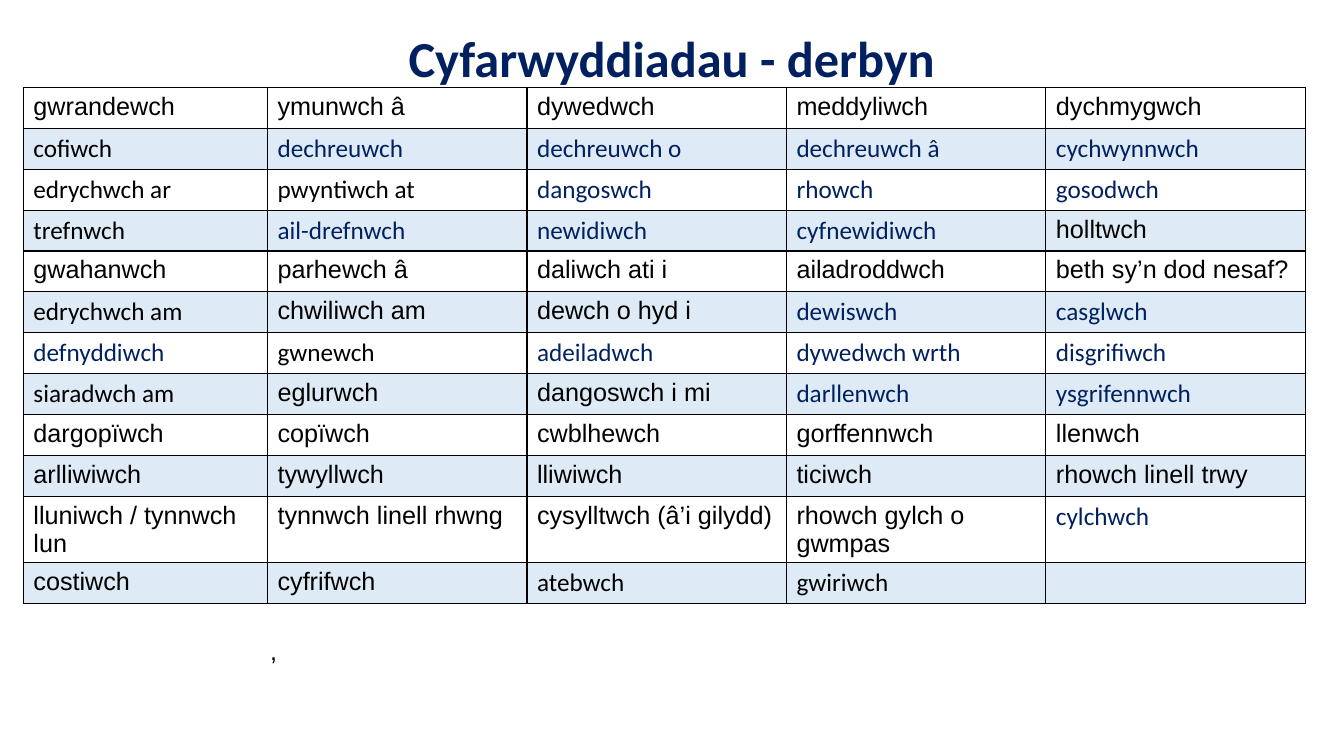
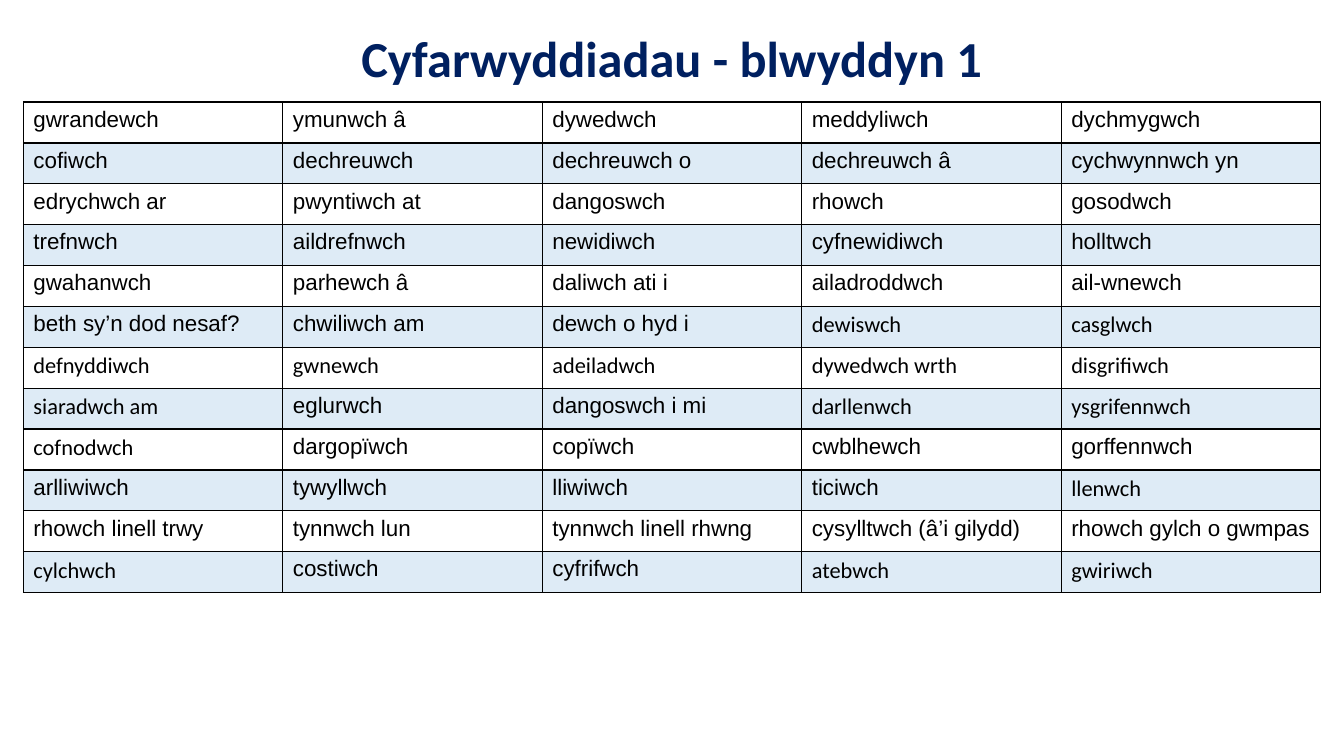
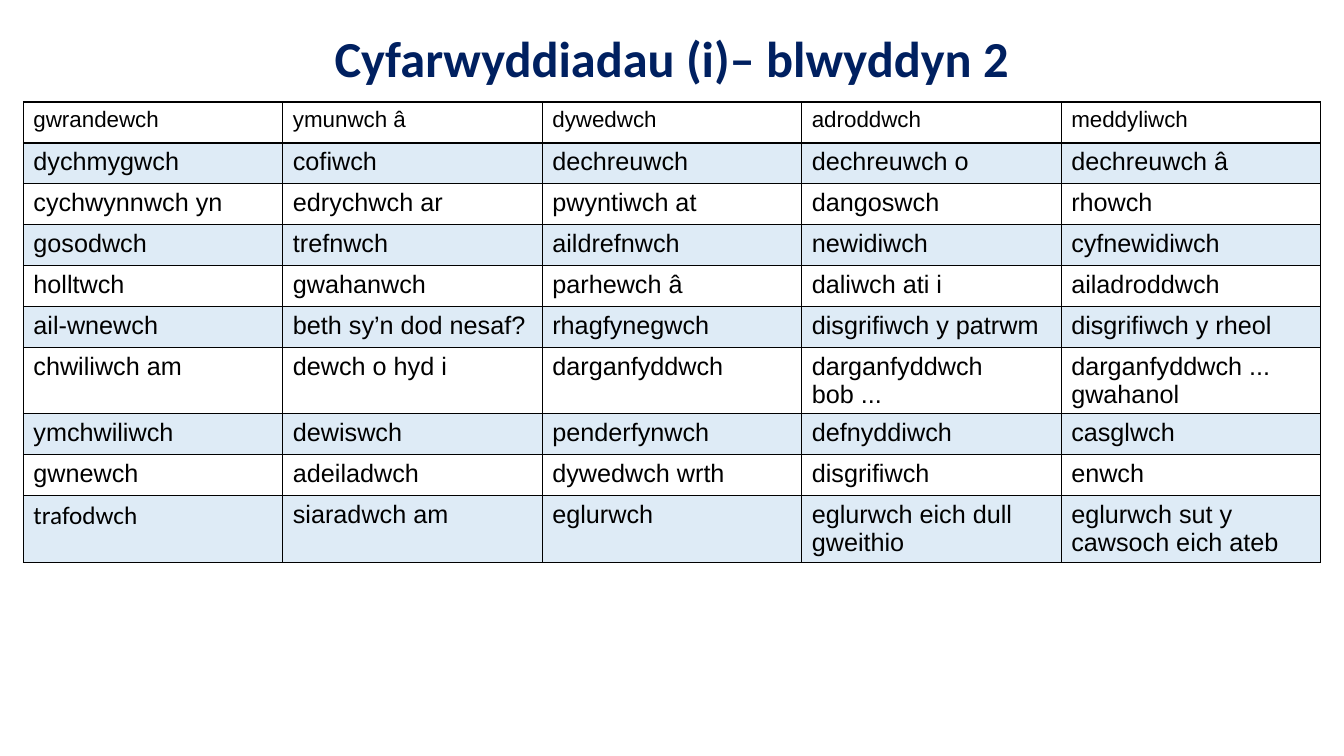
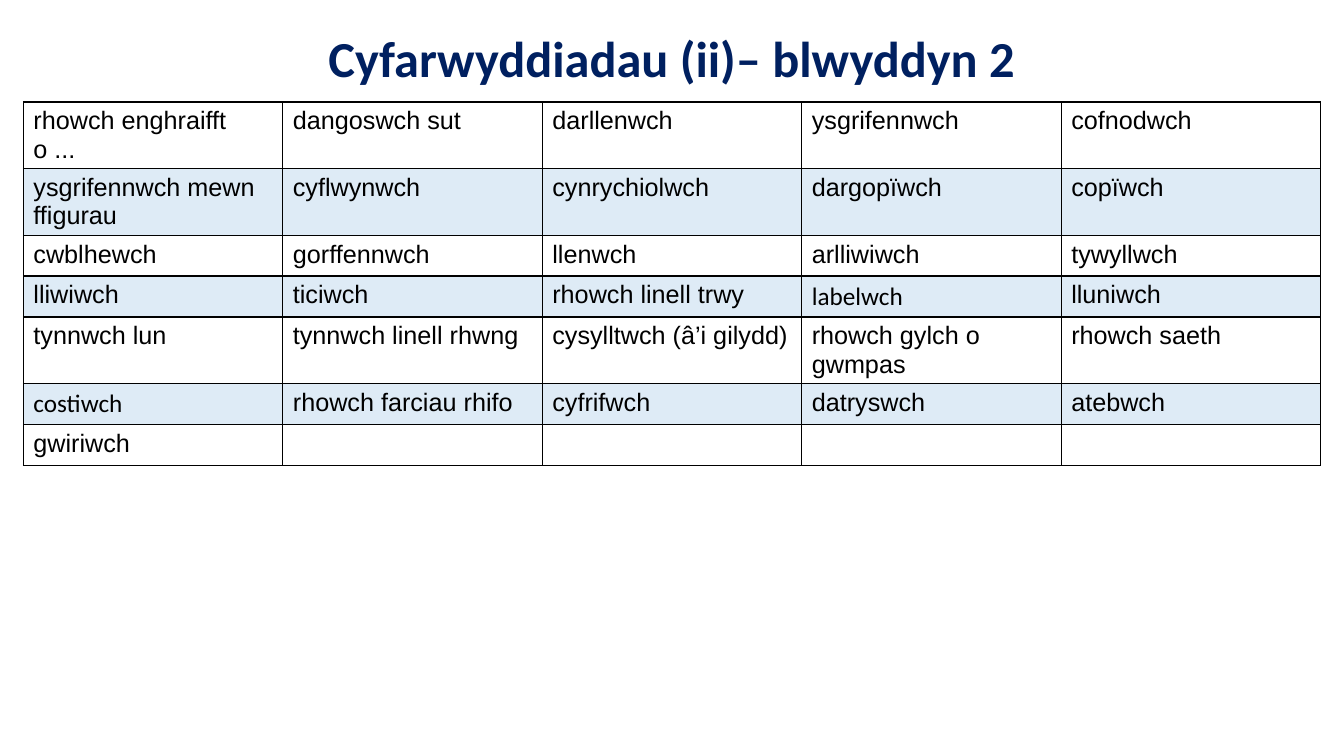
"""Build four slides of Welsh classroom instruction tables."""
from lxml.etree import SubElement
from pptx import Presentation
from pptx.dml.color import RGBColor
from pptx.enum.text import MSO_ANCHOR, MSO_AUTO_SIZE, PP_ALIGN
from pptx.oxml.ns import qn
from pptx.util import Pt

NAVY, BLACK, BAND = "002060", "000000", "5B9BD5"
STYLES = {"*": ("Calibri", BLACK), "#": ("Calibri", NAVY)}
PLAIN = ("Arial", BLACK)
COL_W, ROW_H = 185.33, 29.2

SLIDES = [
    ("Cyfarwyddiadau - derbyn", 62.5, 174.4, 18, 18, """
gwrandewch|ymunwch â|dywedwch|meddyliwch|dychmygwch
*cofiwch|#dechreuwch|#dechreuwch o|#dechreuwch â|#cychwynnwch
*edrychwch ar|*pwyntiwch at|#dangoswch|#rhowch|#gosodwch
*trefnwch|#ail-drefnwch|#newidiwch|#cyfnewidiwch|holltwch
gwahanwch|parhewch â|daliwch ati i|ailadroddwch|beth sy’n dod nesaf?
*edrychwch am|chwiliwch am|dewch o hyd i|#dewiswch|#casglwch
#defnyddiwch|*gwnewch|#adeiladwch|#dywedwch wrth|#disgrifiwch
*siaradwch am|eglurwch|dangoswch i mi|#darllenwch|#ysgrifennwch
dargopïwch|copïwch|cwblhewch|gorffennwch|llenwch
arlliwiwch|tywyllwch|lliwiwch|ticiwch|rhowch linell trwy
lluniwch / tynnwch lun|tynnwch linell rhwng|cysylltwch (â’i gilydd)|rhowch gylch o gwmpas|#cylchwch
costiwch|cyfrifwch|*atebwch|*gwiriwch|"""),
    ("Cyfarwyddiadau - blwyddyn 1", 72.9, COL_W, 16, 16, """
gwrandewch|ymunwch â|dywedwch|meddyliwch|dychmygwch
cofiwch|dechreuwch|dechreuwch o|dechreuwch â|cychwynnwch yn
edrychwch ar|pwyntiwch at|dangoswch|rhowch|gosodwch
trefnwch|aildrefnwch|newidiwch|cyfnewidiwch|holltwch
gwahanwch|parhewch â|daliwch ati i|ailadroddwch|ail-wnewch
beth sy’n dod nesaf?|chwiliwch am|dewch o hyd i|*dewiswch|*casglwch
*defnyddiwch|*gwnewch|*adeiladwch|*dywedwch wrth|*disgrifiwch
*siaradwch am|eglurwch|dangoswch i mi|*darllenwch|*ysgrifennwch
*cofnodwch|dargopïwch|copïwch|cwblhewch|gorffennwch
arlliwiwch|tywyllwch|lliwiwch|ticiwch|*llenwch
rhowch linell trwy|tynnwch lun|tynnwch linell rhwng|cysylltwch (â’i gilydd)|rhowch gylch o gwmpas
*cylchwch|costiwch|cyfrifwch|*atebwch|*gwiriwch"""),
    ("Cyfarwyddiadau (i)– blwyddyn 2", 72.9, COL_W, 16, 18, """
gwrandewch|ymunwch â|dywedwch|adroddwch|meddyliwch
dychmygwch|cofiwch|dechreuwch|dechreuwch o|dechreuwch â
cychwynnwch yn|edrychwch ar|pwyntiwch at|dangoswch|rhowch
gosodwch|trefnwch|aildrefnwch|newidiwch|cyfnewidiwch
holltwch|gwahanwch|parhewch â|daliwch ati i|ailadroddwch
ail-wnewch|beth sy’n dod nesaf?|rhagfynegwch|disgrifiwch y patrwm|disgrifiwch y rheol
chwiliwch am|dewch o hyd i|darganfyddwch|darganfyddwch bob ...|darganfyddwch ... gwahanol
ymchwiliwch|dewiswch|penderfynwch|defnyddiwch|casglwch
gwnewch|adeiladwch|dywedwch wrth|disgrifiwch|enwch
*trafodwch|siaradwch am|eglurwch|eglurwch eich dull gweithio|eglurwch sut y cawsoch eich ateb"""),
    ("Cyfarwyddiadau (ii)– blwyddyn 2", 72.9, COL_W, 18, 18, """
rhowch enghraifft o ...|dangoswch sut|darllenwch|ysgrifennwch|cofnodwch
ysgrifennwch mewn ffigurau|cyflwynwch|cynrychiolwch|dargopïwch|copïwch
cwblhewch|gorffennwch|llenwch|arlliwiwch|tywyllwch
lliwiwch|ticiwch|rhowch linell trwy|*labelwch|lluniwch
tynnwch lun|tynnwch linell rhwng|cysylltwch (â’i gilydd)|rhowch gylch o gwmpas|rhowch saeth
*costiwch|rhowch farciau rhifo|cyfrifwch|datryswch|atebwch
gwiriwch||||"""),
]


def set_font(font, name, size, color, bold=False):
    font.name, font.size, font.bold = name, Pt(size), bold
    font.color.rgb = RGBColor.from_string(color)


def format_cell(cell, banded):
    tcPr = cell._tc.get_or_add_tcPr()
    for side in ("a:lnL", "a:lnR", "a:lnT", "a:lnB"):
        ln = SubElement(tcPr, qn(side), w=str(Pt(1)))
        fill = SubElement(ln, qn("a:solidFill"))
        SubElement(fill, qn("a:srgbClr"), val=BLACK)
    if banded:
        cell.fill.solid()
        cell.fill.fore_color.rgb = RGBColor.from_string(BAND)
        SubElement(tcPr.find(".//" + qn("a:srgbClr") + f"[@val='{BAND}']"), qn("a:alpha"), val="20000")
    else:
        cell.fill.background()


prs = Presentation()
prs.slide_width, prs.slide_height = Pt(960), Pt(540)

for title, top, first_w, first_size, size, words in SLIDES:
    s = prs.slides.add_slide(prs.slide_layouts[5])
    sp = s.shapes.title
    sp.left, sp.top, sp.width, sp.height = Pt(66), Pt(14.4), Pt(828), Pt(58.3)
    tf = sp.text_frame
    tf.text = title
    tf.auto_size = MSO_AUTO_SIZE.NONE
    tf.vertical_anchor = MSO_ANCHOR.MIDDLE
    p = tf.paragraphs[0]
    p.alignment, p.line_spacing = PP_ALIGN.CENTER, 0.9
    set_font(p.runs[0].font, "Calibri", 36, NAVY, True)

    rows = [line.split("|") for line in words.strip().split("\n")]
    widths = [first_w] + [COL_W] * 4
    tbl = s.shapes.add_table(len(rows), 5, Pt(16.7), Pt(top), Pt(sum(widths)), Pt(ROW_H * len(rows))).table
    tbl.first_row = tbl.horz_banding = False
    for col, width in zip(tbl.columns, widths):
        col.width = Pt(width)
    for i, row in enumerate(rows):
        tbl.rows[i].height = Pt(ROW_H)
        for j, word in enumerate(row):
            cell = tbl.cell(i, j)
            format_cell(cell, i % 2 == 1)
            if word:
                name, color = STYLES.get(word[0], PLAIN)
                cell.text_frame.text = word.lstrip("*#")
                r = cell.text_frame.paragraphs[0].runs[0]
                set_font(r.font, name, size if i else first_size, color)

sp = prs.slides[0].shapes.add_textbox(Pt(185.8), Pt(450), Pt(480), Pt(29))
tf = sp.text_frame
tf.word_wrap = True
tf.auto_size = MSO_AUTO_SIZE.SHAPE_TO_FIT_TEXT
tf.text = ","
set_font(tf.paragraphs[0].runs[0].font, *PLAIN[:1], 18, BLACK)

prs.save("out.pptx")
